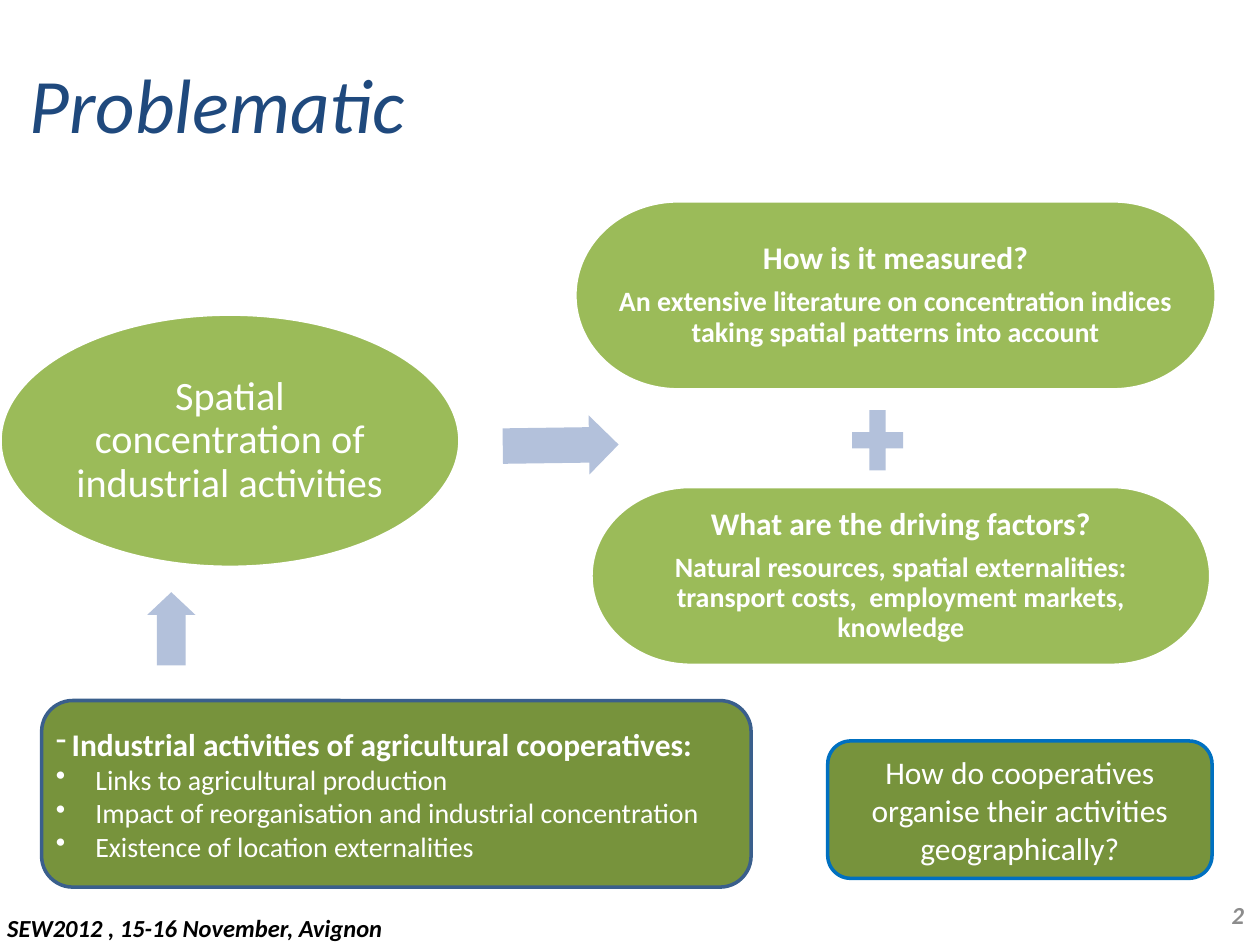
import pptx
import pptx.util
import pptx.dml.color
import pptx.enum.shapes
import pptx.enum.text
from lxml import etree

Pt = pptx.util.Pt
SHAPE = pptx.enum.shapes.MSO_SHAPE
ALIGN = pptx.enum.text.PP_ALIGN
MIDDLE = pptx.enum.text.MSO_ANCHOR.MIDDLE
DRAWING = "{http://schemas.openxmlformats.org/drawingml/2006/main}"

COLORS = {
    "white": "FFFFFF", "black": "000000", "title": "1F497D", "number": "8C8C8C",
    "bubble": "9BBB59", "panel": "77933C", "arrow": "B3C1DB",
    "navy": "3A5F8C", "blue": "0070C0",
}


class SlideBuilder:
    """Holds the style and the current page; all lengths are in points."""

    font_name = "Calibri"

    def __init__(self, page):
        self.page = page

    def color(self, name):
        return pptx.dml.color.RGBColor.from_string(COLORS[name])

    def style(self, para, size, color="white", bold=False, italic=False):
        font = para.font
        font.name, font.size = self.font_name, Pt(size)
        font.bold, font.italic = bold, italic
        font.color.rgb = self.color(color)

    def bullet(self, para, mark, indent):
        """Give the paragraph a bullet with a hanging indent."""
        properties = para._p.get_or_add_pPr()
        properties.set("marL", str(Pt(indent)))
        properties.set("indent", str(-Pt(indent)))
        etree.SubElement(properties, DRAWING + "buChar").set("char", mark)

    def frame(self, shape, margins=(7.2, 3.6), wrap=True):
        frame = shape.text_frame
        frame.word_wrap = wrap
        frame.vertical_anchor = MIDDLE
        frame.margin_left = frame.margin_right = Pt(margins[0])
        frame.margin_top = frame.margin_bottom = Pt(margins[1])
        return frame

    def paragraphs(self, frame, lines):
        """Yield one paragraph for each line of text."""
        for index, line in enumerate(lines):
            para = frame.paragraphs[0] if index == 0 else frame.add_paragraph()
            para.text = line
            yield para

    def title(self, text):
        shape = self.page.shapes.title
        shape.left, shape.top, shape.width, shape.height = Pt(0), Pt(0), Pt(720), Pt(117)
        frame = self.frame(shape)
        frame.margin_left = Pt(17)
        para = frame.paragraphs[0]
        para.text = text
        para.alignment = ALIGN.LEFT
        self.style(para, 44, "title", italic=True)

    def shape(self, kind, area, fill, line=None, rotation=0, adjustments=()):
        shape = self.page.shapes.add_shape(kind, *map(Pt, area))
        shape.shadow.inherit = False
        shape.rotation = rotation
        for index, value in enumerate(adjustments):
            shape.adjustments[index] = value
        shape.fill.solid()
        shape.fill.fore_color.rgb = self.color(fill)
        if line:
            shape.line.color.rgb = self.color(line)
            shape.line.width = Pt(2)
        else:
            shape.line.fill.background()
        return shape

    def bubble(self, kind, area, lines, sizes, bold=True):
        frame = self.frame(self.shape(kind, area, "bubble", "white"), (2, 2))
        for para, size in zip(self.paragraphs(frame, lines), sizes):
            para.alignment = ALIGN.CENTER
            para.line_spacing = 0.9
            para.space_after = Pt(round(size * 0.35, 1))
            self.style(para, size, bold=bold)

    def bullet_panel(self, area, heading, items):
        shape = self.shape(SHAPE.ROUNDED_RECTANGLE, area, "panel", "navy")
        frame = self.frame(shape, (3, 3.6))
        for index, para in enumerate(self.paragraphs(frame, [heading, *items])):
            is_heading = index == 0
            para.alignment = ALIGN.LEFT
            self.bullet(para, *(("-", 9) if is_heading else ("•", 22.5)))
            self.style(para, 18 if is_heading else 16, bold=is_heading)

    def question_panel(self, area, text):
        shape = self.shape(SHAPE.ROUNDED_RECTANGLE, area, "panel", "blue")
        para = next(self.paragraphs(self.frame(shape), [text]))
        para.alignment = ALIGN.CENTER
        self.style(para, 18)

    def note(self, area, text, color, align=ALIGN.LEFT, wrap=True):
        box = self.page.shapes.add_textbox(*map(Pt, area))
        para = next(self.paragraphs(self.frame(box, wrap=wrap), [text]))
        para.alignment = align
        self.style(para, 14, color, bold=True, italic=True)


def main():
    deck = pptx.Presentation()
    deck.slide_width, deck.slide_height = Pt(720), Pt(540)
    builder = SlideBuilder(deck.slides.add_slide(deck.slide_layouts[5]))

    builder.title("Problematic")
    builder.note((-3, 518, 229, 24), "SEW2012 , 15-16 November, Avignon", "black", wrap=False)

    builder.bubble(SHAPE.FLOWCHART_TERMINATOR, (328.5, 114.8, 366.5, 108), [
        "How is it measured?",
        "An extensive literature on concentration indices taking spatial patterns into account",
    ], (18, 16))
    builder.shape(SHAPE.MATH_PLUS, (481.7, 228.2, 39.6, 46.8), "arrow")
    builder.bubble(SHAPE.FLOWCHART_TERMINATOR, (337.7, 278, 354.2, 102.2), [
        "What are the driving factors?",
        "Natural resources, spatial externalities: transport costs,  employment markets, knowledge",
    ], (18, 16))
    builder.shape(SHAPE.RIGHT_ARROW, (287.3, 237.6, 66.2, 33.8), "arrow",
                  rotation=359.2, adjustments=(0.6, 0.5))
    builder.bubble(SHAPE.OVAL, (0, 179.5, 262.8, 144.7),
                   ["Spatial concentration of industrial activities"], (23,), bold=False)

    builder.bullet_panel((23.8, 400.3, 405.4, 106.6),
                         "Industrial activities of agricultural cooperatives:", [
                             "Links to agricultural production",
                             "Impact of reorganisation and industrial concentration",
                             "Existence of location externalities",
                         ])
    builder.shape(SHAPE.RIGHT_ARROW, (77, 345.6, 41.8, 27.4), "arrow",
                  rotation=270, adjustments=(0.6, 0.47))
    builder.question_panel((473, 423.4, 219.6, 78.5),
                           "How do cooperatives organise their activities geographically?")
    builder.note((550, 508.3, 168, 28.8), "2", "number", ALIGN.RIGHT)

    deck.save("out.pptx")


if __name__ == "__main__":
    main()
